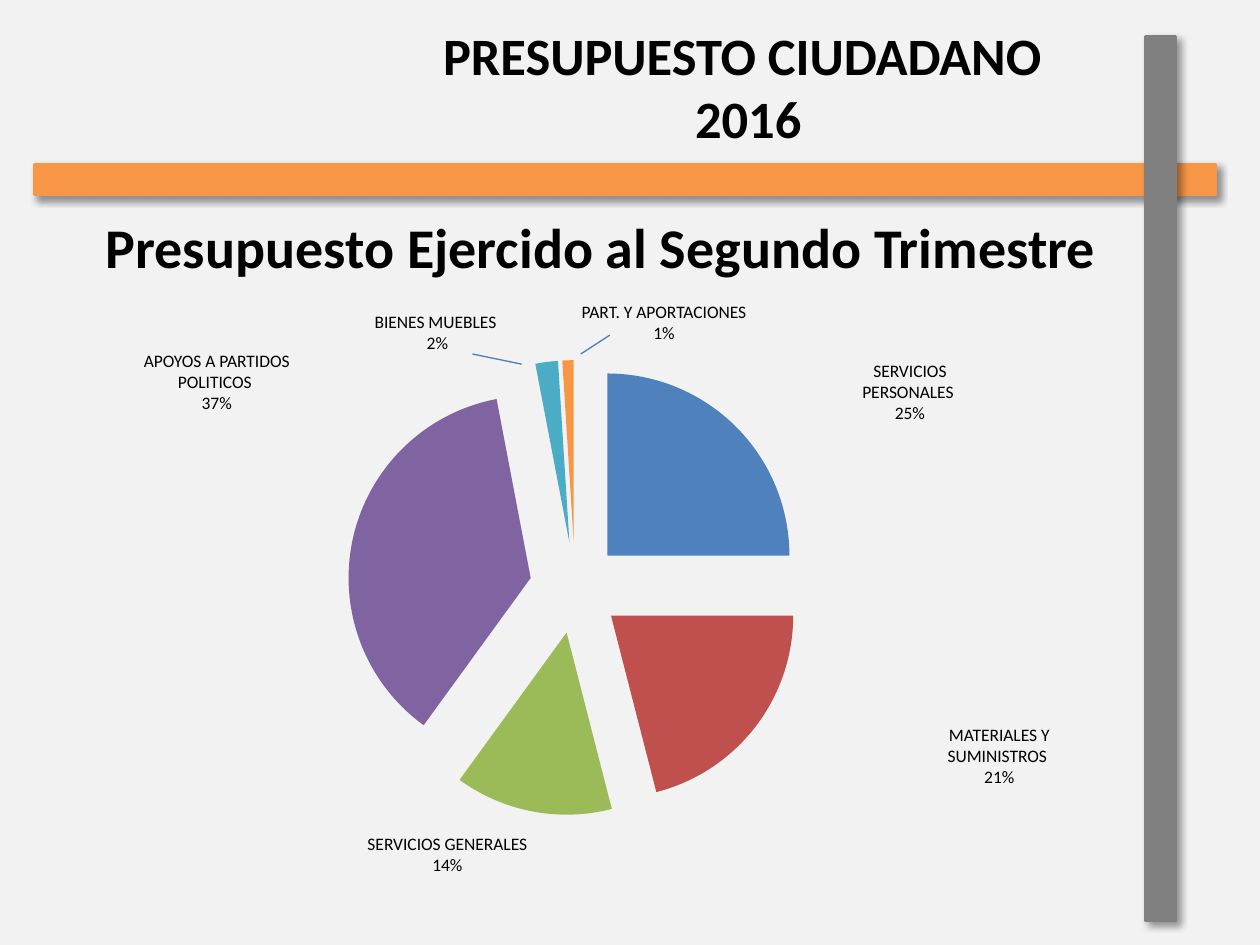
from dataclasses import dataclass

from lxml import etree
from pptx import Presentation
from pptx.chart.data import CategoryChartData
from pptx.dml.color import RGBColor
from pptx.enum.chart import XL_CHART_TYPE
from pptx.enum.shapes import MSO_CONNECTOR, MSO_SHAPE
from pptx.enum.text import MSO_AUTO_SIZE, PP_ALIGN
from pptx.oxml import parse_xml
from pptx.oxml.ns import nsdecls, qn
from pptx.slide import Slide
from pptx.util import Pt

PIE = XL_CHART_TYPE.PIE
STRAIGHT = MSO_CONNECTOR.STRAIGHT
RECTANGLE = MSO_SHAPE.RECTANGLE
GROW = MSO_AUTO_SIZE.SHAPE_TO_FIT_TEXT
FIXED = MSO_AUTO_SIZE.NONE
CENTER = PP_ALIGN.CENTER

FONT = "Calibri"
BACKGROUND = RGBColor(0xF2, 0xF2, 0xF2)
BLACK = RGBColor(0, 0, 0)
BLUE = RGBColor(0x4F, 0x81, 0xBD)
RED = RGBColor(0xC0, 0x50, 0x4D)
GREEN = RGBColor(0x9B, 0xBB, 0x59)
PURPLE = RGBColor(0x80, 0x64, 0xA2)
TEAL = RGBColor(0x4B, 0xAC, 0xC6)
ORANGE = RGBColor(0xF7, 0x96, 0x46)
GRAY = RGBColor(0x80, 0x80, 0x80)
LEADER_BLUE = RGBColor(0x4B, 0x7E, 0xBC)

EXPLOSION = 25
PLOT_LAYOUT = {"x": 0.24, "y": 0.03, "w": 0.52, "h": 0.93}


@dataclass(frozen=True)
class Frame:
    left: float
    top: float
    width: float
    height: float

    def lengths(self) -> tuple[Pt, Pt, Pt, Pt]:
        return Pt(self.left), Pt(self.top), Pt(self.width), Pt(self.height)


@dataclass(frozen=True)
class Bar:
    frame: Frame
    color: RGBColor


@dataclass(frozen=True)
class Category:
    name: str
    percent: int
    color: RGBColor
    label: Frame


@dataclass(frozen=True)
class Leader:
    start: tuple[float, float]
    end: tuple[float, float]


BARS = [
    Bar(Frame(19.8, 94, 674.6, 17.3), ORANGE),
    Bar(Frame(654.5, 20.9, 17.3, 504.7), GRAY),
]
CATEGORIES = [
    Category("SERVICIOS PERSONALES ", 25, BLUE, Frame(466.6, 202.3, 106.6, 43.9)),
    Category("MATERIALES Y SUMINISTROS ", 21, RED, Frame(517.7, 410.4, 106.6, 43.9)),
    Category("SERVICIOS GENERALES", 14, GREEN, Frame(202.3, 472.3, 106.6, 31.7)),
    Category("APOYOS A PARTIDOS POLITICOS ", 37, PURPLE, Frame(61.9, 196.6, 123.8, 43.9)),
    Category("BIENES MUEBLES ", 2, TEAL, Frame(196.6, 174.2, 106.6, 31.7)),
    Category("PART. Y APORTACIONES", 1, ORANGE, Frame(320.4, 168.5, 118.1, 31.7)),
]
LEADERS = [
    Leader((270, 202.3), (298.1, 208.1)),
    Leader((331.9, 202.3), (348.5, 191.5)),
]


def add_bar(page: Slide, bar: Bar) -> None:
    shape = page.shapes.add_shape(RECTANGLE, *bar.frame.lengths())
    shape.fill.solid()
    shape.fill.fore_color.rgb = bar.color
    shape.line.color.rgb = bar.color
    shape.line.width = Pt(2)
    shape.shadow.inherit = False
    effects = shape.element.spPr.find(qn("a:effectLst"))
    effects.append(parse_xml(
        f'<a:outerShdw {nsdecls("a")} blurRad="{Pt(4)}" dist="{Pt(3)}" '
        'dir="2700000" algn="tl" rotWithShape="0"><a:srgbClr val="000000">'
        '<a:alpha val="40000"/></a:srgbClr></a:outerShdw>'
    ))


def add_text(page: Slide, frame: Frame, text: str, size: float,
             bold: bool = False, auto_size: MSO_AUTO_SIZE = GROW) -> None:
    box = page.shapes.add_textbox(*frame.lengths())
    box.text_frame.word_wrap = True
    box.text_frame.auto_size = auto_size
    box.text_frame.text = text
    for para in box.text_frame.paragraphs:
        para.alignment = CENTER
        for span in para.runs:
            span.font.name = FONT
            span.font.size = Pt(size)
            span.font.bold = bold
            span.font.color.rgb = BLACK


def add_pie(page: Slide, frame: Frame) -> None:
    data = CategoryChartData()
    data.categories = [str(number) for number in range(1, len(CATEGORIES) + 1)]
    data.add_series("Series 1", [category.percent for category in CATEGORIES])
    chart = page.shapes.add_chart(PIE, *frame.lengths(), data).chart
    chart.has_legend = False
    chart.has_title = False
    chart.font.name = FONT
    chart.font.size = Pt(10)
    chart.font.color.rgb = BLACK
    plot = chart.plots[0]
    plot.vary_by_categories = True
    series = plot.series[0]
    for index, category in enumerate(CATEGORIES):
        fill = series.points[index].format.fill
        fill.solid()
        fill.fore_color.rgb = category.color
    explosion = etree.Element(qn("c:explosion"), val=str(EXPLOSION))
    series._element.find(qn("c:dPt")).addprevious(explosion)

    plot_area = chart._chartSpace.chart.plotArea
    for old_layout in plot_area.findall(qn("c:layout")):
        plot_area.remove(old_layout)
    layout = etree.Element(qn("c:layout"))
    manual = etree.SubElement(layout, qn("c:manualLayout"))
    etree.SubElement(manual, qn("c:layoutTarget"), val="inner")
    for mode in ("xMode", "yMode"):
        etree.SubElement(manual, qn(f"c:{mode}"), val="edge")
    for name, share in PLOT_LAYOUT.items():
        etree.SubElement(manual, qn(f"c:{name}"), val=str(share))
    plot_area.insert(0, layout)


def add_leader(page: Slide, leader: Leader) -> None:
    points = [Pt(value) for value in leader.start + leader.end]
    line = page.shapes.add_connector(STRAIGHT, *points)
    line.line.color.rgb = LEADER_BLUE
    line.line.width = Pt(0.75)
    etree.SubElement(line.element.spPr, qn("a:effectLst"))


def main() -> None:
    deck = Presentation()
    deck.slide_width, deck.slide_height = Pt(720), Pt(540)
    page = deck.slides.add_slide(deck.slide_layouts[6])
    page.background.fill.solid()
    page.background.fill.fore_color.rgb = BACKGROUND
    for bar in BARS:
        add_bar(page, bar)
    add_text(page, Frame(11.5, 118.1, 663.8, 46.1),
             "Presupuesto Ejercido al Segundo Trimestre", 32, bold=True)
    add_text(page, Frame(206.6, 9.4, 442.1, 67.7),
             "PRESUPUESTO CIUDADANO \v2016", 30, bold=True, auto_size=FIXED)
    add_pie(page, Frame(78.5, 196.6, 500.4, 281.5))
    for category in CATEGORIES:
        add_text(page, category.label, f"{category.name}\n{category.percent}%", 10)
    for leader in LEADERS:
        add_leader(page, leader)
    deck.save("out.pptx")


if __name__ == "__main__":
    main()
